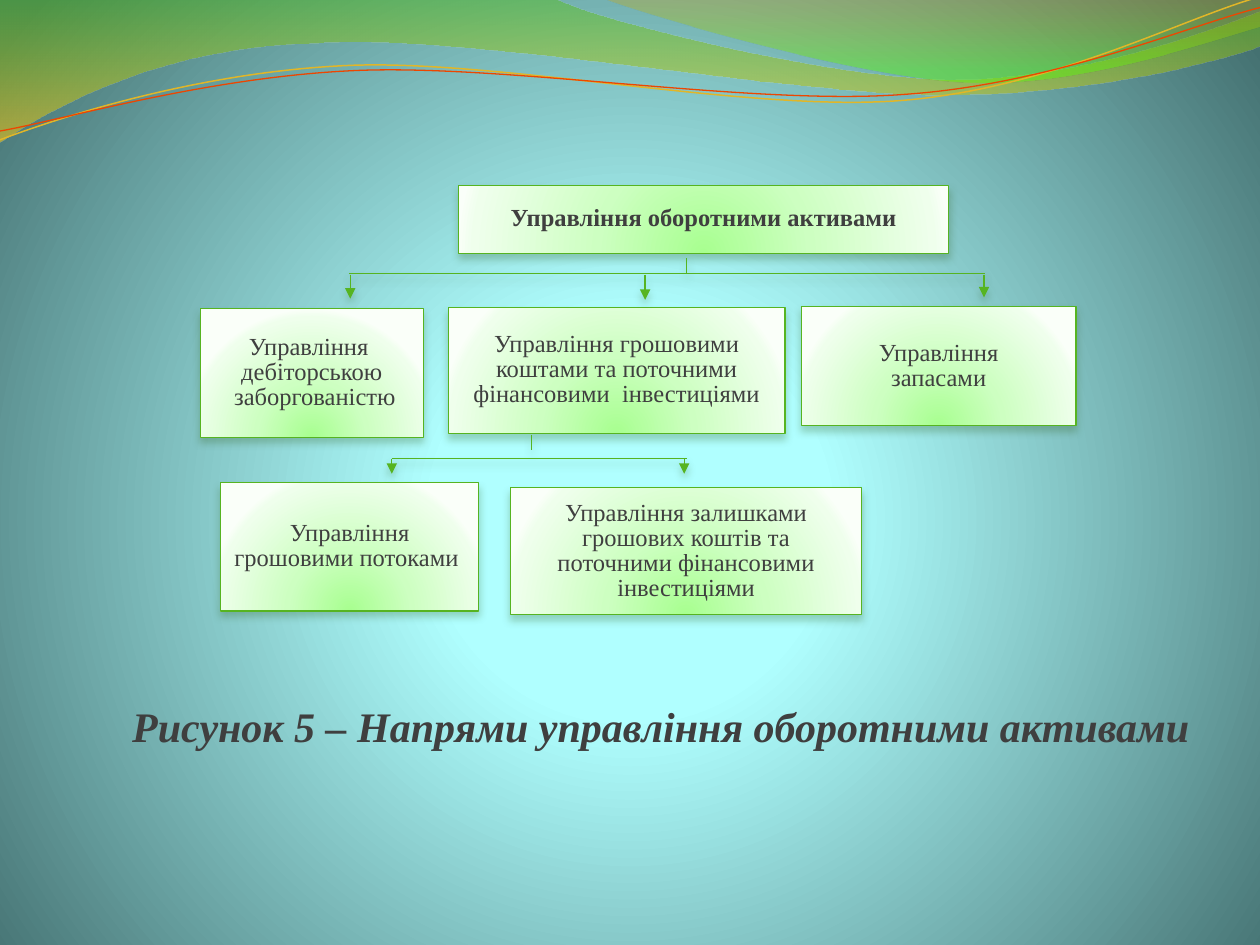
from dataclasses import dataclass

from pptx import Presentation
from pptx.dml.color import RGBColor
from pptx.enum.shapes import MSO_CONNECTOR, MSO_SHAPE
from pptx.enum.text import MSO_ANCHOR, PP_ALIGN
from pptx.oxml import parse_xml
from pptx.oxml.ns import nsdecls, qn
from pptx.util import Inches, Pt


@dataclass(frozen=True)
class Theme:
    font: str = "Times New Roman"
    ink: str = "3F3F3F"
    green: str = "56B421"
    shadow: str = "29560F"
    shadow_opacity: int = 25
    gold: str = "E1B628"
    orange: str = "ED4600"
    label_size: int = 14
    caption_size: int = 24
    # Gradient stops: position, colour, opacity, all in percent but the colour
    page: tuple = ((0, "B3FFFF", 100), (25, "B0FFFF", 100), (100, "447171", 100))
    node: tuple = ((0, "A8FF90", 100), (43, "CDFFC1", 100),
                   (93, "EFFFEC", 100), (100, "FAFFF9", 100))
    wide_wave: tuple = ((0, "53C015", 45), (100, "FFC811", 55))
    corner_wave: tuple = ((0, "D4A50A", 30), (80, "5EF608", 45))


@dataclass(frozen=True)
class Box:
    left: float
    top: float
    width: float
    height: float

    def point(self, x, y):
        return Inches(self.left + x), Inches(self.top + y)


THEME = Theme()

# Each wave: a start, then segments of one point (line) or three (curve).
WIDE_WAVE = [[(0, 0)], [(4.4, -0.01)],
             [(4.76, 0.17), (6.64, 0.63), (7.58, 0.63)],
             [(8.53, 0.63), (9.58, 0.26), (10, 0.09)],
             [(10.01, 0.36)],
             [(9.83, 0.44), (8.7, 0.76), (7.46, 0.75)],
             [(6.22, 0.75), (3.82, 0.28), (2.57, 0.34)],
             [(1.29, 0.36), (0.46, 0.83), (-0.01, 1.13)],
             [(0, 0)]]
CORNER_WAVE = [[(4.79, -0.01)],
               [(5.09, 0.11), (6.82, 0.62), (7.69, 0.65)],
               [(8.56, 0.69), (9.61, 0.32), (10, 0.21)],
               [(10, 0)], [(4.79, -0.01)]]
GOLD_WAVE = [[(0, 1.11)],
             [(0.48, 0.93), (1.58, 0.57), (2.77, 0.52)],
             [(3.95, 0.47), (5.93, 0.89), (7.13, 0.8)],
             [(8.33, 0.71), (9.38, 0.15), (9.98, -0.02)]]
ORANGE_WAVE = [[(0, 1.04)],
               [(0.47, 0.96), (1.64, 0.61), (2.83, 0.56)],
               [(4.03, 0.51), (5.97, 0.84), (7.17, 0.75)],
               [(8.36, 0.67), (9.41, 0.21), (10, 0.06)]]

NODES = [
    (Box(0, 0.98, 1.77, 1.02), ["Управління ", "дебіторською", " заборгованістю"], False),
    (Box(0.16, 2.36, 2.05, 1.02), ["Управління грошовими потоками "], False),
    (Box(2.46, 2.4, 2.79, 1.01), ["Управління залишками грошових коштів та "
                                  "поточними фінансовими інвестиціями"], False),
    (Box(2.05, 0, 3.89, 0.54), ["Управління оборотними активами"], True),
    (Box(1.97, 0.97, 2.67, 1), ["Управління грошовими коштами та поточними "
                                "фінансовими  інвестиціями"], False),
    (Box(4.77, 0.96, 2.18, 0.95), ["Управління", "запасами"], False),
]


def gradient(stops, focus=None):
    """Gradient fill: round about the focus rectangle, or top to bottom."""
    marks = "".join(
        f'<a:gs pos="{place * 1000}"><a:srgbClr val="{colour}">'
        f'<a:alpha val="{opacity * 1000}"/></a:srgbClr></a:gs>'
        for place, colour, opacity in stops)
    if focus:
        sides = " ".join(f'{side}="{value * 1000}"' for side, value in zip("ltrb", focus))
        course = f'<a:path path="circle"><a:fillToRect {sides}/></a:path>'
    else:
        course = '<a:lin ang="5400000" scaled="0"/>'
    return f'<a:gradFill {nsdecls("a")} rotWithShape="1"><a:gsLst>{marks}</a:gsLst>{course}</a:gradFill>'


def fill_gradient(shape, stops, focus=None):
    shape.fill.background()
    properties = shape._element.spPr
    empty = properties.find(qn("a:noFill"))
    properties.replace(empty, parse_xml(gradient(stops, focus)))


def set_line(shape, colour, width=0.75):
    shape.line.color.rgb = RGBColor.from_string(colour)
    shape.line.width = Pt(width)


def add_shadow(shape):
    shape._element.spPr.append(parse_xml(
        f'<a:effectLst {nsdecls("a")}><a:outerShdw blurRad="{Pt(4.5)}" dist="{Pt(3)}" '
        f'dir="5400000" rotWithShape="0"><a:srgbClr val="{THEME.shadow}">'
        f'<a:alpha val="{THEME.shadow_opacity * 1000}"/></a:srgbClr></a:outerShdw></a:effectLst>'))


def write(para, text, **font):
    para.alignment = PP_ALIGN.CENTER
    span = para.add_run()
    span.text = text
    span.font.color.rgb = RGBColor.from_string(THEME.ink)
    for name, value in {"name": THEME.font, **font}.items():
        setattr(span.font, name, value)


def add_wave(shapes, box, segments, closed):
    start, *others = [box.point(*point) for segment in segments for point in segment]
    builder = shapes.build_freeform(*start, scale=1.0)
    builder.add_line_segments(others, close=closed)
    wave = builder.convert_to_shape()
    wave.shadow.inherit = False
    # Join the three lines through the points of each curve into one cubic.
    lines = iter(list(wave._element.iter(qn("a:lnTo"))))
    for segment in segments[1:]:
        group = [next(lines) for _ in segment]
        if len(group) == 3:
            curve = parse_xml(f'<a:cubicBezTo {nsdecls("a")}/>')
            group[0].addprevious(curve)
            for line in group:
                curve.append(line[0])
                line.getparent().remove(line)
    return wave


def add_waves(page, box):
    for segments, stops in ((WIDE_WAVE, THEME.wide_wave), (CORNER_WAVE, THEME.corner_wave)):
        wave = add_wave(page.shapes, box, segments, True)
        fill_gradient(wave, stops)
        wave.line.fill.background()
    strands = page.shapes.add_group_shape().shapes
    for segments, colour, width in ((GOLD_WAVE, THEME.gold, 0.85),
                                    (ORANGE_WAVE, THEME.orange, 0.75)):
        wave = add_wave(strands, box, segments, False)
        wave.fill.background()
        set_line(wave, colour, width)


def add_node(shapes, box, place, lines, bold):
    node = shapes.add_shape(MSO_SHAPE.RECTANGLE, *box.point(place.left, place.top),
                            Inches(place.width), Inches(place.height))
    fill_gradient(node, THEME.node, (50, 130, 50, -30))
    set_line(node, THEME.green)
    add_shadow(node)
    frame = node.text_frame
    frame.word_wrap = True
    frame.vertical_anchor = MSO_ANCHOR.MIDDLE
    for index, line in enumerate(lines):
        para = frame.add_paragraph() if index else frame.paragraphs[0]
        para.line_spacing = 0.85
        write(para, line, size=Pt(THEME.label_size), bold=bold)


def add_link(shapes, box, start, end, arrow=False):
    link = shapes.add_connector(MSO_CONNECTOR.STRAIGHT, *box.point(*start), *box.point(*end))
    set_line(link, THEME.green)
    if arrow:
        outline = link._element.spPr.find(qn("a:ln"))
        outline.append(parse_xml(f'<a:tailEnd {nsdecls("a")} type="triangle"/>'))
    add_shadow(link)


def add_branch(shapes, box, stem, bar, drop_top, drops):
    """A stem from the parent, a bar (left, right, height) and arrows to the children."""
    stem_x, stem_top = stem
    left, right, level = bar
    add_link(shapes, box, (stem_x, stem_top), (stem_x, stem_top + 0.12))
    add_link(shapes, box, (left, level), (right, level))
    for x, length in drops:
        add_link(shapes, box, (x, drop_top), (x, drop_top + length), arrow=True)


def add_tree(page, box):
    shapes = page.shapes.add_group_shape().shapes
    for place, lines, bold in NODES:
        add_node(shapes, box, place, lines, bold)
    add_branch(shapes, box, (3.86, 0.58), (1.18, 6.23, 0.7), 0.71,
               ((1.19, 0.19), (3.53, 0.2), (6.22, 0.18)))
    add_branch(shapes, box, (2.63, 1.98), (1.52, 3.86, 2.17), 2.17,
               ((1.52, 0.12), (3.84, 0.12)))


def add_caption(page, box):
    caption = page.shapes.add_textbox(*box.point(0, 0), Inches(box.width), Inches(box.height))
    frame = caption.text_frame
    frame.word_wrap = True
    frame.vertical_anchor = MSO_ANCHOR.BOTTOM
    para = frame.paragraphs[0]
    write(para, "Рисунок 5 – Напрями управління оборотними активами",
          size=Pt(THEME.caption_size), bold=True, italic=True)
    para._p.get_or_add_pPr().set("indent", str(Inches(0.49)))


def main():
    deck = Presentation()
    deck.slide_width, deck.slide_height = Inches(10), Inches(7.5)
    page = deck.slides.add_slide(deck.slide_layouts[6])
    page._element.cSld.insert(0, parse_xml(
        f'<p:bg {nsdecls("p", "a")}><p:bgPr>{gradient(THEME.page, (10, 110, 10, 100))}'
        '<a:effectLst/></p:bgPr></p:bg>'))
    add_waves(page, Box(0, 0, 10, 1.13))
    add_tree(page, Box(1.59, 1.47, 6.95, 3.41))
    add_caption(page, Box(0.35, 4.8, 9.3, 1.21))
    deck.save("out.pptx")


if __name__ == "__main__":
    main()
